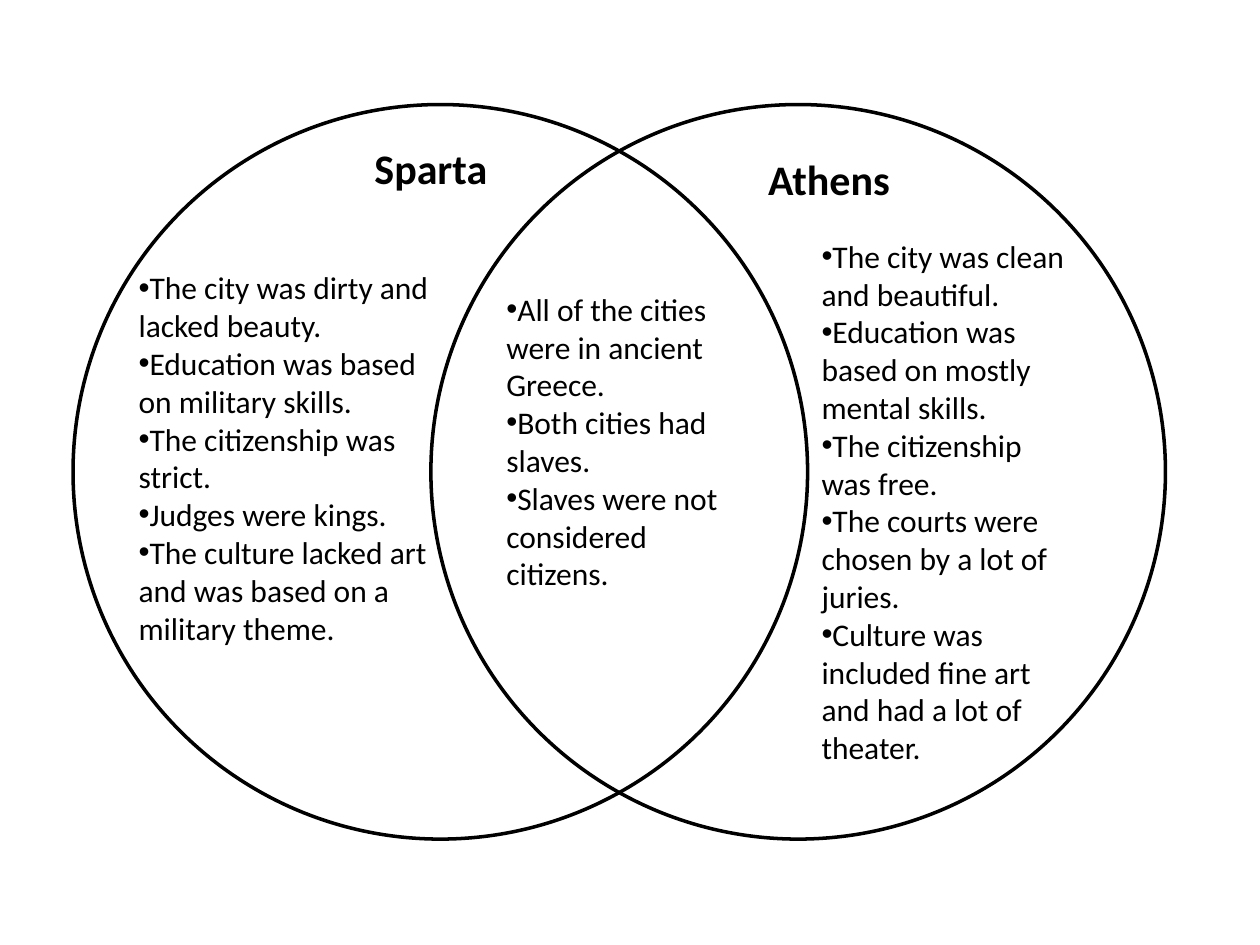
from dataclasses import dataclass

from lxml.etree import SubElement
from pptx import Presentation
from pptx.dml.color import RGBColor
from pptx.enum.shapes import MSO_SHAPE as Preset
from pptx.enum.text import MSO_ANCHOR as Anchor, MSO_AUTO_SIZE as AutoSize, PP_ALIGN as Align
from pptx.oxml.ns import qn
from pptx.slide import Slide
from pptx.util import Inches, Pt

COLORS = {"ink": "000000"}

SPARTA = [
    "The city was dirty and lacked beauty.",
    "Education was based on military skills.",
    "The citizenship was strict.",
    "Judges were kings.",
    "The culture lacked art and was based on a military theme.",
]
SHARED = [
    "All of the cities were in ancient Greece.",
    "Both cities had slaves.",
    "Slaves were not considered citizens.",
]
ATHENS = [
    "The city was clean and beautiful.",
    "Education was based on mostly mental skills.",
    "The citizenship was free.",
    "The courts were chosen by a lot of juries.",
    "Culture was included fine art and had a lot of theater.",
]


@dataclass
class VennSlide:
    """Draws the parts of a Venn diagram in one style on one slide."""

    slide: Slide
    font: str = "Calibri"
    heading_size: int = 24
    list_size: int = 18
    diameter: float = 5.83

    def circle(self, left, top):
        ring = self.slide.shapes.add_shape(
            Preset.OVAL, Inches(left), Inches(top), Inches(self.diameter), Inches(self.diameter))
        ring.shadow.inherit = False
        ring.fill.background()
        ring.line.color.rgb = RGBColor.from_string(COLORS["ink"])
        ring.line.width = Pt(2)

    def holder(self, index, left, top, width, height):
        area = self.slide.placeholders[index]
        area.left, area.top = Inches(left), Inches(top)
        area.width, area.height = Inches(width), Inches(height)
        return area

    def box(self, left, top, width, height):
        return self.slide.shapes.add_textbox(
            Inches(left), Inches(top), Inches(width), Inches(height))

    def fill_text(self, area, lines, size, align, bold=False, bullet=None):
        frame = area.text_frame
        frame.text = "\n".join(lines)
        frame.word_wrap = True
        frame.auto_size = AutoSize.SHAPE_TO_FIT_TEXT
        frame.vertical_anchor = Anchor.TOP
        for paragraph in frame.paragraphs:
            if bullet:
                properties = paragraph._p.get_or_add_pPr()
                properties.set("marL", "0")
                properties.set("indent", "0")
                SubElement(properties, qn("a:buFont"), typeface="Arial")
                SubElement(properties, qn("a:buChar"), char=bullet)
            paragraph.alignment = align
            paragraph.space_before = Pt(0)
            for run in paragraph.runs:
                run.font.name = self.font
                run.font.size = Pt(size)
                run.font.bold = bold
                run.font.color.rgb = RGBColor.from_string(COLORS["ink"])

    def heading(self, area, text):
        self.fill_text(area, [text], self.heading_size, Align.CENTER, bold=True)

    def bullets(self, area, facts):
        self.fill_text(area, facts, self.list_size, Align.LEFT, bullet="•")


def main():
    deck = Presentation()
    deck.slide_width, deck.slide_height = Inches(10), Inches(7.5)
    slide = deck.slides.add_slide(deck.slide_layouts.get_by_name("Comparison"))
    title = slide.shapes.title._element
    title.getparent().remove(title)

    venn = VennSlide(slide)
    for left in (0.58, 3.42):
        venn.circle(left, 0.83)
    venn.heading(venn.holder(1, 2.42, 1.08, 2, 0.5), "Sparta")
    venn.heading(venn.holder(3, 5.58, 1.17, 2, 0.5), "Athens")
    venn.bullets(venn.holder(2, 1, 2.08, 2.5, 3.13), SPARTA)
    venn.bullets(venn.box(3.92, 2.25, 2.08, 2.52), SHARED)
    venn.bullets(venn.holder(4, 6.42, 1.83, 2.17, 4.34), ATHENS)
    deck.save("out.pptx")


if __name__ == "__main__":
    main()
